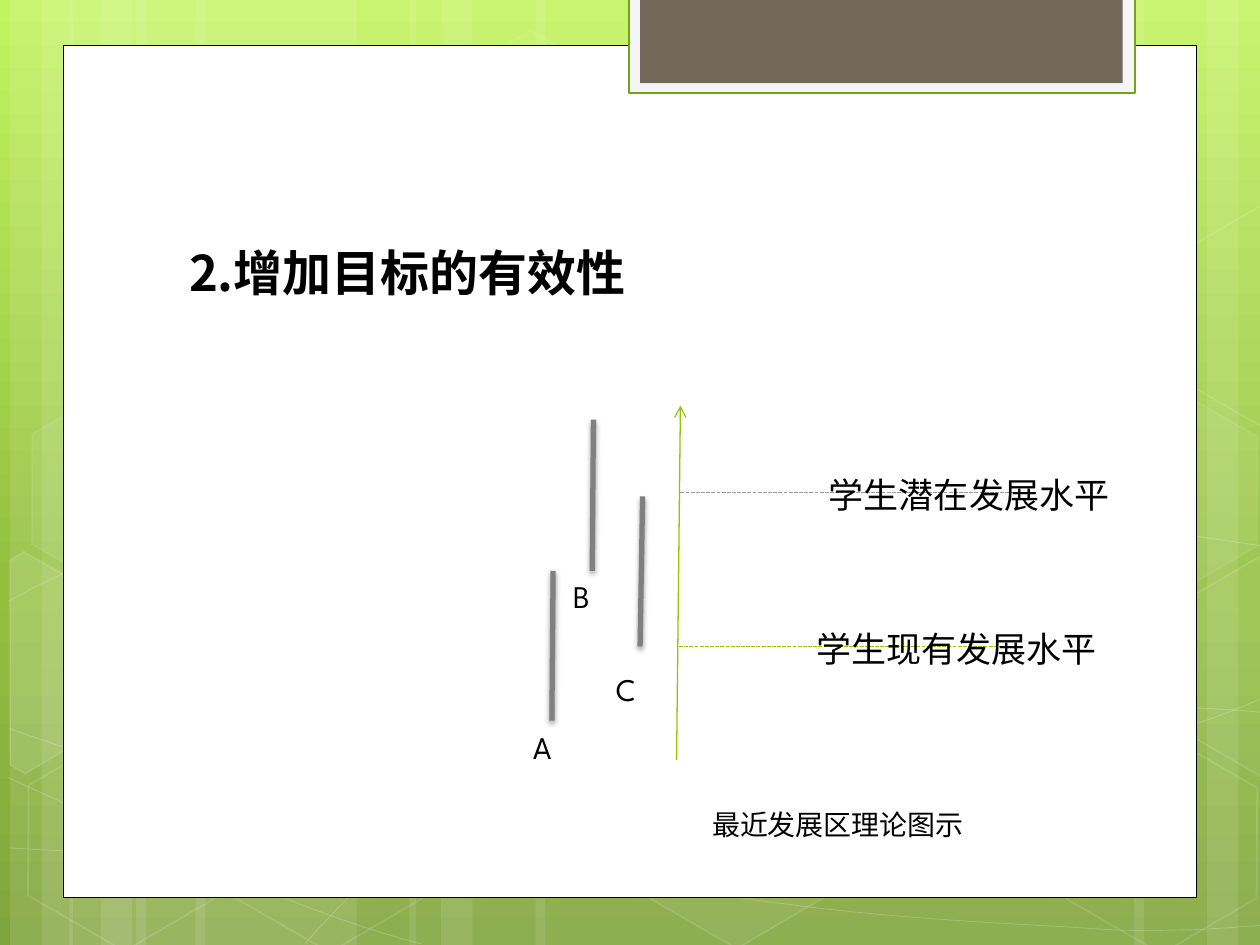
from copy import deepcopy
from typing import NamedTuple

from lxml import etree
from pptx import Presentation
from pptx.dml.color import RGBColor
from pptx.enum.dml import MSO_LINE
from pptx.enum.shapes import MSO_CONNECTOR, MSO_SHAPE
from pptx.enum.text import MSO_ANCHOR, PP_ALIGN
from pptx.oxml.ns import qn
from pptx.util import Pt

COLUMNS, ROWS = 10, 7.5
CELL = 914400
RECTANGLE, HEXAGON = MSO_SHAPE.RECTANGLE, MSO_SHAPE.HEXAGON
STRAIGHT, DASH = MSO_CONNECTOR.STRAIGHT, MSO_LINE.SQUARE_DOT
LEFT, CENTER, JUSTIFY = PP_ALIGN.LEFT, PP_ALIGN.CENTER, PP_ALIGN.JUSTIFY
WHITE, BLACK, GREEN, GRAY = "FFFFFF", "000000", "94C600", "808080"
LATIN, CJK = "League Spartan", "Noto Sans CJK SC"


class Stroke(NamedTuple):
    color: str
    points: float
    opacity: int = 100


class Hexagon(NamedTuple):
    column: float
    row: float
    fill_opacity: int
    line_opacity: int


class Segment(NamedTuple):
    start: tuple
    end: tuple
    stroke: Stroke
    dash: object = None
    arrow: bool = False
    shadow: bool = False


class Label(NamedTuple):
    text: str
    area: tuple
    size: int
    align: object = JUSTIFY


GRADIENT = [("C3F35F", 0), ("93BF3F", 0.62), ("81A53E", 1)]
BANDS = [  # left column, width
    (1.08, 1.75), (0.08, 0.5), (0.33, 0.83), (1.55, 1.75), (0.55, 0.5), (0.8, 0.83),
    (7.33, 1.75), (9.58, 0.5), (9, 0.83), (4.25, 3.08), (3.25, 0.5), (3.5, 0.83),
]
CURVES = [  # a start, then three Bezier points per arc
    [(0.07, 6.73), (0.61, 6.76), (1.15, 6.79), (1.9, 6.78), (2.65, 6.77), (3.58, 6.75),
     (4.58, 6.65), (5.58, 6.55), (7, 6.36), (7.92, 6.17), (8.83, 5.98), (9.77, 5.68),
     (10.07, 5.51)],
    [(0.07, 4.77), (0.36, 4.61), (0.65, 4.46), (1.21, 4.31), (1.78, 4.16), (2.59, 3.94),
     (3.47, 3.87), (4.36, 3.8), (5.44, 3.79), (6.54, 3.87), (7.64, 3.95), (9.47, 4.26),
     (10.07, 4.34)],
    [(0.06, 6.17), (1.27, 6.72), (2.47, 7.27), (3.34, 7.49)],
    [(0.07, 5.78), (0.38, 5.89), (0.7, 6), (1.28, 6.16), (1.86, 6.31), (2.73, 6.56),
     (3.57, 6.73), (4.4, 6.9), (5.45, 7.08), (6.28, 7.18), (7.11, 7.29), (8, 7.33),
     (8.53, 7.36), (9.05, 7.4), (9.19, 7.38), (9.45, 7.38), (9.71, 7.37), (9.89, 7.35),
     (10.07, 7.34)],
    [(2.42, 7.49), (2.6, 7.29), (2.78, 7.09), (3.02, 6.91), (3.26, 6.73), (3.6, 6.53),
     (3.88, 6.39), (4.16, 6.25), (4.33, 6.19), (4.7, 6.09), (5.06, 5.99), (5.73, 5.85),
     (6.08, 5.78), (6.44, 5.71), (6.49, 5.71), (6.8, 5.69), (7.11, 5.66), (7.6, 5.63),
     (7.94, 5.62), (8.29, 5.61), (8.86, 5.62), (8.86, 5.62), (9.08, 5.62), (9.3, 5.62),
     (9.53, 5.62), (9.71, 5.63), (9.88, 5.64), (9.97, 5.65), (10.06, 5.66), (10.03, 5.65),
     (10.06, 5.66)],
]
HEXAGONS = [
    Hexagon(3.34, 0.36, 4, 8), Hexagon(4.97, 5.89, 6, 12), Hexagon(0.11, 5.91, 0, 12),
    Hexagon(0.14, 3.12, 7, 8), Hexagon(1.74, 5.92, 0, 12), Hexagon(7.53, 4.53, 10, 12),
    Hexagon(8.34, 5.93, 0, 12), Hexagon(8.34, 3.14, 7, 8),
]
CUT_HEXAGONS = [  # corners, fill opacity
    ([(0.08, 4.45), (0.19, 4.38), (0.96, 4.82), (0.95, 5.7), (0.2, 6.14), (0.08, 6.07)], 10),
    ([(9.26, 4.85), (10.01, 4.41), (10.09, 4.46), (10.09, 6.13), (10.02, 6.17), (9.26, 5.73)], 4),
    ([(9.26, 2.07), (10.01, 1.63), (10.1, 1.68), (10.09, 3.35), (10.02, 3.39), (9.26, 2.95)], 0),
]
PANELS = [  # area, fill, outline
    ((0.5, 0.36, 9, 6.76), WHITE, Stroke(BLACK, 0.5)),
    ((4.99, -0.02, 4.02, 0.76), "F5F5F5", Stroke("74A510", 1.25)),
    ((5.08, -0.02, 3.83, 0.68), "71685A", None),
]
AXIS, BAR = Stroke(GREEN, 0.75), Stroke(GRAY, 3)
SEGMENTS = [
    Segment((5.39, 5.13), (8.04, 5.13), AXIS, dash=DASH),
    Segment((5.4, 3.91), (8.13, 3.91), Stroke("999999", 0.75), dash=DASH),
    Segment((5.37, 6.03), (5.4, 3.22), AXIS, arrow=True),
    Segment((4.71, 3.33), (4.7, 4.53), BAR, shadow=True),
    Segment((4.39, 4.53), (4.38, 5.72), BAR, shadow=True),
    Segment((5.1, 3.94), (5.08, 5.13), BAR, shadow=True),
]
LABELS = [
    Label("学生现有发展水平", (6.38, 4.93, 2.67, 0.54), 20),
    Label("学生潜在发展水平", (6.48, 3.71, 2.57, 0.54), 20),
    Label("A", (4.13, 5.73, 0.58, 0.54), 18),
    Label("B", (4.45, 4.53, 0.58, 0.54), 18),
    Label("C", (4.79, 5.27, 0.58, 0.54), 18),
    Label("最近发展区理论图示", (5.27, 6.36, 2.76, 0.54), 16, CENTER),
]


def cells(*lengths: float) -> list:
    return [round(length * CELL) for length in lengths]


def rgb(color: str) -> RGBColor:
    return RGBColor.from_string(color)


def add_xml(parent, tag: str, **values):
    return etree.SubElement(parent, qn(tag), {key: str(value) for key, value in values.items()})


def fade(fill_parent, opacity: int) -> None:
    if opacity < 100:
        color = fill_parent.find(f"{qn('a:solidFill')}/{qn('a:srgbClr')}")
        add_xml(color, "a:alpha", val=opacity * 1000)


def paint(shape, fill: str, opacity: int = 100, stroke: Stroke | None = None) -> None:
    shape.shadow.inherit = False
    if opacity:
        shape.fill.solid()
        shape.fill.fore_color.rgb = rgb(fill)
        fade(shape.element.spPr, opacity)
    else:
        shape.fill.background()
    if stroke:
        shape.line.color.rgb = rgb(stroke.color)
        shape.line.width = Pt(stroke.points)
        fade(shape.element.spPr.find(qn("a:ln")), stroke.opacity)
    else:
        shape.line.fill.background()


def add_outline(shapes, points: list, close: bool):
    start, *rest = [cells(*point) for point in points]
    builder = shapes.build_freeform(*start, scale=1.0)
    builder.add_line_segments(rest, close=close)
    return builder.convert_to_shape()


def add_curve(shapes, nodes: list):
    """Turn each three straight steps of an outline into one Bezier arc."""
    shape = add_outline(shapes, nodes, False)
    track = shape.element.find(".//" + qn("a:path"))
    steps = track.findall(qn("a:lnTo"))
    for first in range(0, len(steps), 3):
        arc = add_xml(track, "a:cubicBezTo")
        for step in steps[first:first + 3]:
            arc.append(step[0])
            track.remove(step)
    return shape


def draw_backdrop(page) -> None:
    """Draw the decoration and hand it to the slide's layout."""
    layout = page.slide_layout
    fill = layout.background.fill
    fill.gradient()
    fill.gradient_angle = 270
    stops = layout.element.find(".//" + qn("a:gsLst"))
    stops.append(deepcopy(stops[0]))
    for stop, (color, position) in zip(fill.gradient_stops, GRADIENT):
        stop.color.rgb, stop.position = rgb(color), position
    for holder in list(layout.placeholders)[1:]:
        layout.shapes.element.remove(holder.element)

    group = page.shapes.add_group_shape()
    shapes = group.shapes
    for left, width in BANDS:
        paint(shapes.add_shape(RECTANGLE, *cells(left, 0, width, ROWS)), WHITE, 10)
    for nodes in CURVES:
        paint(add_curve(shapes, nodes), WHITE, 0, Stroke(WHITE, 0.5, 20))
    for item in HEXAGONS:
        shape = shapes.add_shape(HEXAGON, *cells(item.column, item.row, 1.75, 1.52))
        shape.adjustments[0], shape.adjustments[1] = 0.285, 1.155
        shape.rotation = 30
        paint(shape, WHITE, item.fill_opacity, Stroke(WHITE, 1, item.line_opacity))
    for corners, opacity in CUT_HEXAGONS:
        paint(add_outline(shapes, corners, True), WHITE, opacity, Stroke(WHITE, 1, 12))
    panels = [page.shapes.add_shape(RECTANGLE, *cells(*area)) for area, _, _ in PANELS]
    for panel, (_, color, stroke) in zip(panels, PANELS):
        paint(panel, color, stroke=stroke)
    for part in (group, *panels):
        layout.shapes.element.append(part.element)


def write(frame, text: str, font: str, size: int, align, bold: bool = False):
    frame.word_wrap, frame.vertical_anchor = True, MSO_ANCHOR.TOP
    para = frame.paragraphs[0]
    para.alignment = align
    span = para.add_run()
    span.text = text
    for name, value in {"name": font, "size": Pt(size), "bold": bold}.items():
        setattr(span.font, name, value)
    span.font.color.rgb = rgb(BLACK)
    add_xml(span.font._element, "a:ea", typeface=CJK)
    return para


def draw_title(page) -> None:
    title = page.shapes.title
    title.left, title.top, title.width, title.height = cells(1.33, 1.69, 7.41, 3.84)
    para = write(title.text_frame, "2.增加目标的有效性", CJK, 28, LEFT, True)
    para.line_spacing, para.space_before = 1.4, Pt(5.6)
    for name, value in zip(("marL", "indent"), cells(0.37, -0.3)):
        para._p.get_or_add_pPr().set(name, str(value))


def draw_segment(shapes, item: Segment) -> None:
    line = shapes.add_connector(STRAIGHT, *cells(*item.start, *item.end))
    line.line.color.rgb = rgb(item.stroke.color)
    line.line.width = Pt(item.stroke.points)
    if item.dash:
        line.line.dash_style = item.dash
    properties = line.element.spPr
    if item.arrow:
        add_xml(properties.find(qn("a:ln")), "a:tailEnd", type="arrow")
    effects = add_xml(properties, "a:effectLst")
    if item.shadow:
        shadow = add_xml(effects, "a:outerShdw", blurRad=Pt(3.1), dist=Pt(1.6),
                         dir=5400000, rotWithShape=0)
        add_xml(add_xml(shadow, "a:srgbClr", val=BLACK), "a:alpha", val=38000)


def main() -> None:
    deck = Presentation()
    deck.slide_width, deck.slide_height = cells(COLUMNS, ROWS)
    page = deck.slides.add_slide(deck.slide_layouts.get_by_name("Title Only"))
    draw_backdrop(page)
    draw_title(page)
    diagram = page.shapes.add_group_shape().shapes
    for segment in SEGMENTS:
        draw_segment(diagram, segment)
    for label in LABELS:
        box = diagram.add_textbox(*cells(*label.area))
        write(box.text_frame, label.text, LATIN, label.size, label.align)
    deck.save("out.pptx")


if __name__ == "__main__":
    main()
